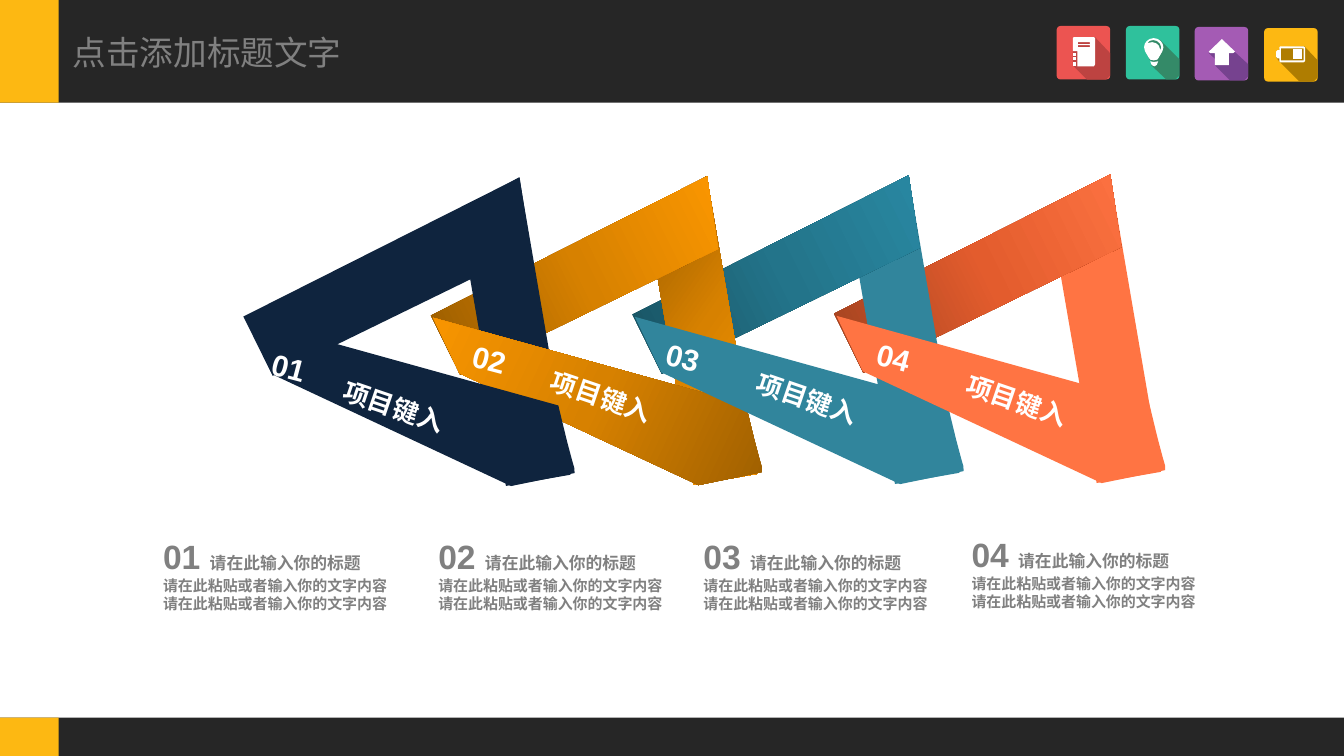
import copy
import math

import pptx
import pptx.dml.color
import pptx.enum.shapes
import pptx.enum.text
import pptx.oxml.ns
import pptx.util

Pt = pptx.util.Pt
SHAPES = pptx.enum.shapes.MSO_SHAPE
WIDTH, HEIGHT = 960, 540
DARK, YELLOW, WHITE, GREY = "262626", "FDB812", "FFFFFF", "808080"
NAVY, TEAL, ORANGE = "0F243E", "31859C", "FF7443"
AMBER = ("975B00", "D78100", "FF9900")

# Ribbon parts: points relative to the arrow box, centre, rotation, gradient angle
SIDE = ([(154, 24), (197.5, 0), (234, 212.5), (188, 220.5)], (193, 109.8), 350.3, 45)
TOP = ([(197.3, 0), (205.2, 51.8), (20.9, 141.8), (0, 99.4)], (109.4, 70.9), 63.8, 270)
FRONT = ([(236.2, 211.7), (190.8, 221), (20.2, 141.1), (1.4, 101.5), (224.6, 163.4),
          (230.8, 189), (234.4, 202.4), (236.1, 208.3)], (121.3, 151.2), 115.2, 90)

# Arrow boxes: left, top, side fill, top fill, front fill
ARROWS = [
    (173.5, 126.7, NAVY, NAVY, NAVY),
    (307.4, 126, AMBER, AMBER, AMBER),
    (451.4, 125.3, TEAL, ("185261", "23748A", "298AA4"), TEAL),
    (595.4, 124.6, ORANGE, ("9F411F", "E35C2D", "FF7443"), ORANGE),
]
# Label positions: number left and top, caption left and top
LABELS = [(187.2, 247, 236.9, 275.8), (330.5, 241.2, 385.2, 268.6),
          (468.7, 239.8, 532.1, 270), (619.2, 239.8, 681.8, 271.4)]
NOTES = [(109.4, 379.4), (306, 379.4), (495.4, 379.4), (686.9, 378)]


def box_outline(left, top, width, height):
    right, bottom = left + width, top + height
    return [(left, top), (right, top), (right, bottom), (left, bottom)]


# Header icons: left, top, tile colour, shadow colour, shadow outline, white glyph shapes
# (each glyph shape is a list of outlines, the later ones being cut out)
ICONS = [
    (754.8, 18.6, "EC5451", "BD4341",
     [(27.4, 7.9), (38.2, 19.4), (38.2, 35.3), (35.3, 38.2), (21.6, 38.2), (11.5, 28),
      (11.5, 17.3), (13, 8.6)],
     [[[(12.2, 7.9), (26.6, 7.9), (27.4, 8.6), (27.4, 27.4), (26.6, 28.8), (14.8, 28.8),
        (14.8, 18), (11.5, 18), (11.5, 8.6)],
       box_outline(15.1, 11.5, 8.7, 1.5), box_outline(15.1, 13.7, 8.7, 1.4)],
      [box_outline(11.5, 19.4, 2.2, 2.2)], [box_outline(11.5, 22.4, 2.2, 2.2)],
      [box_outline(11.5, 26, 2.2, 2.6)]]),
    (804.3, 18.6, "2FC19C", "348A68",
     [(18.7, 9.4), (24.5, 10), (38.2, 23.8), (38.2, 35.3), (35.3, 38.2), (28.8, 38.2),
      (18, 28), (19.4, 26), (16.6, 23.8), (14.4, 12.2)],
     [[[(19.8, 8.6), (22.6, 9.2), (24.8, 10.7), (26.2, 12.8), (26.7, 15.1), (26, 18),
        (23.2, 22.8), (22.3, 24), (19.8, 24.5), (17.3, 24), (16.4, 22.8), (13.6, 18),
        (12.9, 15.1), (13.4, 12.8), (14.8, 10.7), (17, 9.2)],
       [(15.1, 12.2), (16.9, 10.6), (19.4, 10), (22, 10.6), (24.2, 12.4), (25.2, 15.1),
        (24.5, 17.3), (23.5, 14), (21.4, 12.2), (18.7, 11.5)]],
      [[(17.3, 25.2), (19.8, 25.7), (23, 25.2), (22, 27.8), (20.2, 28.8), (18.3, 27.8)]]]),
    (853.4, 19.3, "A45BB4", "76428F",
     [(28.1, 17.3), (38.2, 26.6), (38.2, 35.3), (35.3, 38.2), (25.2, 38.2), (14.4, 27.4),
      (18.7, 26.6), (10.1, 18.7)],
     [[[(18.7, 9.4), (19.4, 8.6), (20.2, 9.4), (28.8, 17.6), (27.4, 18.7), (24.5, 18.7),
        (24.5, 27.2), (14.4, 27.2), (14.4, 18.7), (11.2, 18.7), (10.1, 17.6)]]]),
    (903, 20.1, YELLOW, "AF7D01",
     [(28.8, 13), (38.2, 23), (38.2, 35.3), (35.3, 38.2), (25.2, 38.2), (10.8, 23.8),
      (8.6, 20.9), (11.5, 13.7)],
     [[[(9.4, 15.8), (10.8, 15.8), (10.8, 13.7), (11.5, 13), (28.1, 13), (29.2, 13.7),
        (29.2, 23.6), (28.1, 24.5), (11.5, 24.5), (10.8, 23.6), (10.8, 21.6), (9.4, 21.6),
        (8.6, 20.5), (8.6, 16.6)], box_outline(11.9, 14.4, 16.2, 8.6)],
      [box_outline(20.9, 15.1, 5.8, 7.2)]]),
]


def color(hex_string):
    return pptx.dml.color.RGBColor.from_string(hex_string)


def paint(shape, fill, angle=0):
    """Fill with one colour, or with evenly spread gradient colours."""
    shape.shadow.inherit = False
    shape.line.fill.background()
    if isinstance(fill, str):
        shape.fill.solid()
        shape.fill.fore_color.rgb = color(fill)
        return
    shape.fill.gradient()
    shape.fill.gradient_angle = (360 - angle) % 360
    stop_list = shape._element.find(".//" + pptx.oxml.ns.qn("a:gsLst"))
    stop_list.append(copy.deepcopy(stop_list[-1]))
    for index, stop in enumerate(shape.fill.gradient_stops):
        stop.position = index / 2
        stop.color.rgb = color(fill[index])


def add_preset(slide, kind, left, top, width, height, fill):
    shape = slide.shapes.add_shape(kind, Pt(left), Pt(top), Pt(width), Pt(height))
    paint(shape, fill)
    return shape


def add_outline(slide, left, top, outlines, fill, angle=0):
    placed = [[(Pt(left + x), Pt(top + y)) for x, y in outline] for outline in outlines]
    builder = slide.shapes.build_freeform(*placed[0][0], scale=1.0)
    for index, points in enumerate(placed):
        if index:
            builder.move_to(*points[0])
        builder.add_line_segments(points[1:], close=True)
    shape = builder.convert_to_shape()
    paint(shape, fill, angle)
    return shape


def add_text(slide, left, top, width, height, lines, ink, bold=True, wrap=True, rotation=0):
    """Each line is a list of (text, size) runs."""
    box = slide.shapes.add_textbox(Pt(left), Pt(top), Pt(width), Pt(height))
    box.rotation = rotation
    frame = box.text_frame
    frame.word_wrap = wrap
    frame.auto_size = pptx.enum.text.MSO_AUTO_SIZE.SHAPE_TO_FIT_TEXT
    for index, line in enumerate(lines):
        paragraph = frame.add_paragraph() if index else frame.paragraphs[0]
        for text, size in line:
            run = paragraph.add_run()
            run.text = text
            run.font.name, run.font.size, run.font.bold = "Arial", Pt(size), bold
            run.font.color.rgb = color(ink)
    return box


def add_band(slide, top, height):
    add_preset(slide, SHAPES.RECTANGLE, 0, top, WIDTH, height, DARK)
    add_preset(slide, SHAPES.RECTANGLE, 0, top, 42, height, YELLOW)


def add_icon(slide, left, top, tile_fill, shadow_fill, shadow, glyphs):
    tile = add_preset(slide, SHAPES.ROUNDED_RECTANGLE, left, top, 38.2, 38.2, tile_fill)
    tile.adjustments[0] = 0.07
    add_outline(slide, left, top, [shadow], shadow_fill)
    for outlines in glyphs:
        add_outline(slide, left, top, outlines, WHITE)


def add_ribbon(slide, left, top, part, fill):
    points, (center_x, center_y), rotation, angle = part
    cosine, sine = math.cos(math.radians(rotation)), math.sin(math.radians(rotation))
    upright = [(center_x + (x - center_x) * cosine + (y - center_y) * sine,
                center_y - (x - center_x) * sine + (y - center_y) * cosine)
               for x, y in points]
    add_outline(slide, left, top, [upright], fill, angle).rotation = rotation


def add_arrow_chain(slide):
    # Back parts run from right to left so that each arrow overlaps the next
    for left, top, side_fill, top_fill, _ in reversed(ARROWS):
        add_ribbon(slide, left, top, SIDE, side_fill)
        add_ribbon(slide, left, top, TOP, top_fill)
    # The second front lies beneath the first
    for index in (1, 0, 2, 3):
        left, top, _, _, front_fill = ARROWS[index]
        add_ribbon(slide, left, top, FRONT, front_fill)
    for number, (left, top, caption_left, caption_top) in enumerate(LABELS, 1):
        add_text(slide, left, top, 48.2, 33.1, [[(f"{number:02}", 21.4)]], WHITE,
                 rotation=14.8)
        add_text(slide, caption_left, caption_top, 90, 30.2, [[("项目键入", 18.6)]], WHITE,
                 wrap=False, rotation=18.8)


def add_note(slide, left, top, number):
    body = [("请在此粘贴或者输入你的文字内容", 10.7)]
    heading = [(f"{number:02} ", 24), ("请在此输入你的标题", 12)]
    add_text(slide, left, top, 227.5, 61.9, [heading, body, body], GREY)


def main():
    presentation = pptx.Presentation()
    presentation.slide_width, presentation.slide_height = Pt(WIDTH), Pt(HEIGHT)
    slide = presentation.slides.add_slide(presentation.slide_layouts[6])
    # Header and footer
    add_band(slide, 0, 73.4)
    add_band(slide, 512.6, 27.4)
    for icon in ICONS:
        add_icon(slide, *icon)
    title = add_text(slide, 43.9, 19.4, 208, 36, [[("点击添加标题文字", 24)]], GREY,
                     bold=False, wrap=False)
    title.text_frame.paragraphs[0].alignment = pptx.enum.text.PP_ALIGN.CENTER
    # Arrows and notes
    add_arrow_chain(slide)
    for number, (left, top) in enumerate(NOTES, 1):
        add_note(slide, left, top, number)
    presentation.save("out.pptx")


if __name__ == "__main__":
    main()
